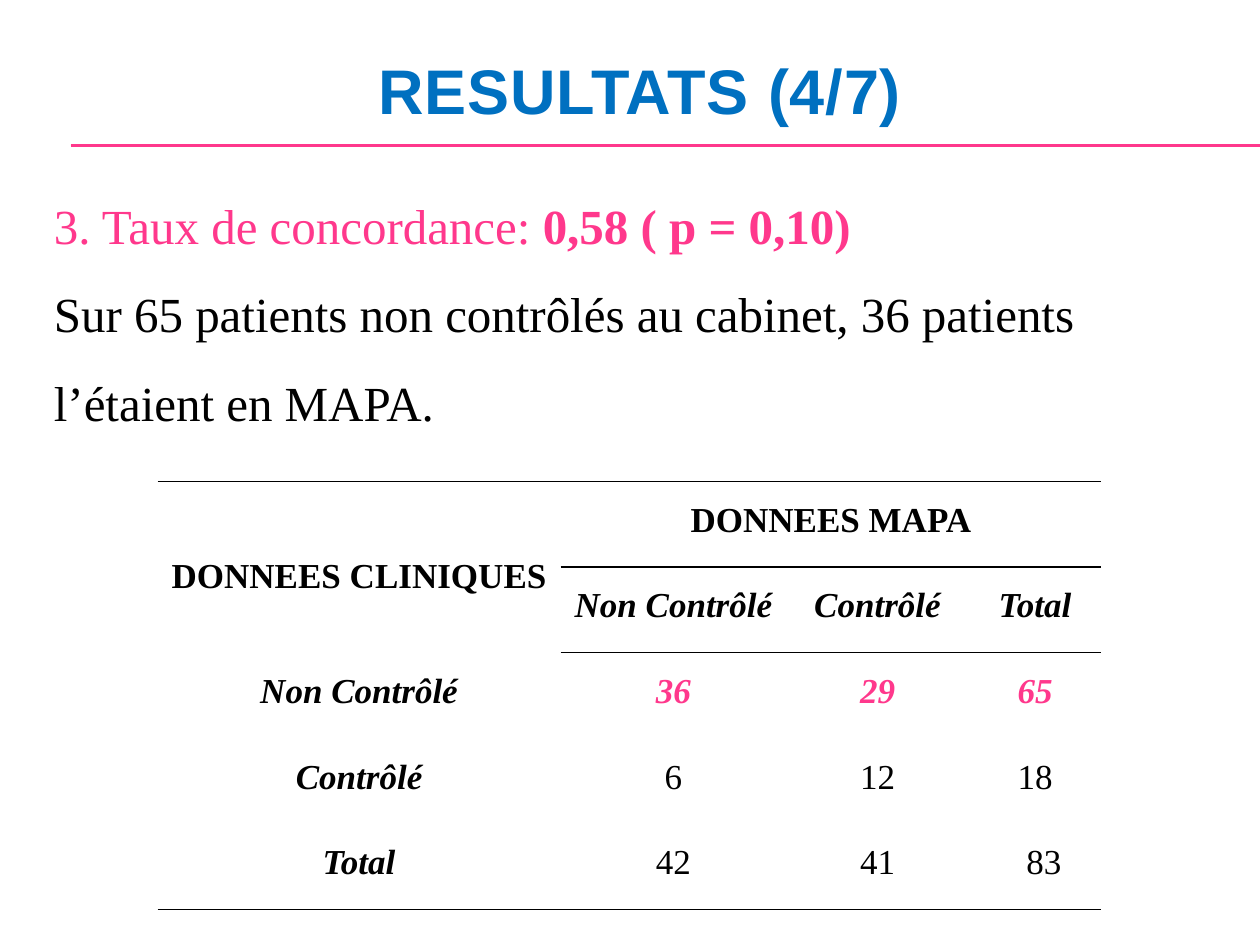
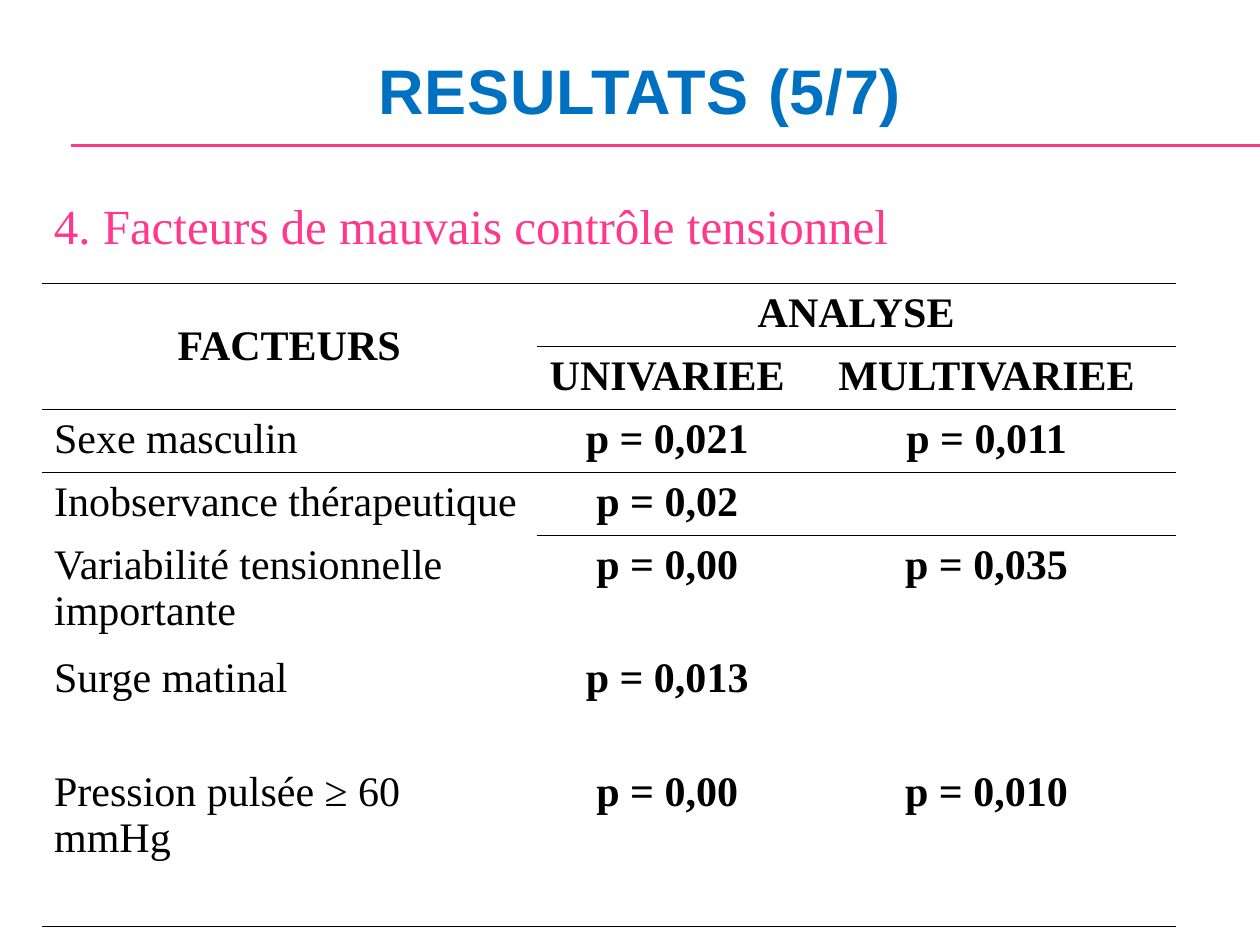
"""Build two result slides, each with a title, a lead text and a ruled table."""
import pptx
import pptx.util
import pptx.dml.color
import pptx.enum.shapes
import pptx.enum.text
import pptx.oxml.ns
import lxml.etree

HUES = {"blue": "0070C0", "pink": "FF388C", "black": "000000"}
HEAD, BODY = "Arial", "Times New Roman"
PLAIN = "{2D5ABB26-0587-4C30-8999-92F81FD0307C}"
WIDE, HIGH = 10, 7.5
LEFT, SPAN = 0.33, 9.5
LINES = (1.15, 1.16)

LOOKS = {
    "n": (False, False, "black"),
    "b": (True, False, "black"),
    "bi": (True, True, "black"),
    "hot": (True, True, "pink"),
}

PAGES = [
    {
        "title": "RESULTATS (4/7)",
        "lead": [
            [("3. Taux de concordance: ", "pink", False),
             ("0,58 ( p = 0,10)", "pink", True)],
            [("Sur 65 patients non contrôlés au cabinet, 36 patients "
              "l’étaient en MAPA.", "black", False)],
        ],
        "deep": 3.55,
        "table": {
            "at": (1.25, 3.82),
            "cols": [3.2, 1.79, 1.45, 1.05],
            "rows": [0.68] * 5,
            "size": 20, "pad": (0.07, 0), "gap": 1.5, "after": 6,
            "mid": True,
            "nudge": {(4, 3): 0.14},
            "rules": [(0, 0, 1), (1, 1, 1), (5, 0, 1)],
            "cells": [
                (["DONNEES CLINIQUES", "DONNEES MAPA", "", ""], "b", "b"),
                (["", "Non Contrôlé", "Contrôlé", "Total"], "bi", "bi"),
                (["Non Contrôlé", "36", "29", "65"], "bi", "hot"),
                (["Contrôlé", "6", "12", "18"], "bi", "n"),
                (["Total", "42", "41", "83"], "bi", "n"),
            ],
        },
    },
    {
        "title": "RESULTATS (5/7)",
        "lead": [[("4. Facteurs de mauvais contrôle tensionnel",
                   "pink", False)]],
        "deep": 1.43,
        "table": {
            "at": (0.33, 2.25),
            "cols": [3.93, 2.07, 3],
            "rows": [0.5] * 4 + [0.9, 0.9, 1.3],
            "size": 24, "pad": (0.1, 0.05), "gap": 1, "after": 0,
            "mid": False,
            "nudge": {},
            "rules": [(0, 0, 1), (1, 1, 1), (2, 0, 1), (3, 1, 0.5), (7, 0, 1)],
            "cells": [
                (["FACTEURS", "ANALYSE", ""], "b", "b"),
                (["", "UNIVARIEE", "MULTIVARIEE"], "b", "b"),
                (["Sexe masculin", "p = 0,021", "p = 0,011"], "n", "b"),
                (["Inobservance thérapeutique", "p = 0,02", ""], "n", "b"),
                (["Variabilité tensionnelle importante", "p = 0,00",
                  "p = 0,035"], "n", "b"),
                (["Surge matinal", "p = 0,013", ""], "n", "b"),
                (["Pression pulsée ≥ 60 mmHg", "p = 0,00", "p = 0,010"],
                 "n", "b"),
            ],
        },
    },
]

inch = pptx.util.Inches
ALIGN = pptx.enum.text.PP_ALIGN
MID = pptx.enum.text.MSO_ANCHOR.MIDDLE


def tint(hue):
    return pptx.dml.color.RGBColor.from_string(HUES[hue])


def sub(node, tag, **attrs):
    return lxml.etree.SubElement(node, pptx.oxml.ns.qn(tag), **attrs)


def put(para, text, face, size, hue, bold=False, slant=False):
    run = para.add_run()
    run.text = text
    font = run.font
    font.name, font.size = face, pptx.util.Pt(size)
    font.bold, font.italic = bold, slant
    font.color.rgb = tint(hue)
    return run


def place(shape, left, top, width, height):
    shape.left, shape.top = inch(left), inch(top)
    shape.width, shape.height = inch(width), inch(height)


def add_lines(slide):
    for top in LINES:
        line = slide.shapes.add_connector(
            pptx.enum.shapes.MSO_CONNECTOR.STRAIGHT,
            inch(0.56), inch(top), inch(WIDE), inch(top))
        line.line.color.rgb = tint("pink")
        line.line.width = pptx.util.Pt(0.75)
        sub(line._element.spPr, "a:effectLst")


def add_title(slide, text):
    title = slide.shapes.title
    place(title, LEFT, 0.25, SPAN, 0.92)
    title.text_frame.vertical_anchor = MID
    para = title.text_frame.paragraphs[0]
    para.alignment = ALIGN.CENTER
    run = put(para, text, HEAD, 36, "blue", True)
    run.font._element.set("spc", "50")


def add_lead(slide, lead, deep):
    box = slide.shapes.add_textbox(0, 0, 0, 0)
    place(box, LEFT, 1.27, SPAN, deep)
    frame = box.text_frame
    frame.word_wrap = True
    for num, parts in enumerate(lead):
        para = frame.add_paragraph() if num else frame.paragraphs[0]
        para.line_spacing = 1.5
        for text, hue, bold in parts:
            put(para, text, BODY, 28, hue, bold)


def edge(cell, side, width):
    line = sub(cell._tc.get_or_add_tcPr(), side,
               w=str(pptx.util.Pt(width)))
    sub(sub(line, "a:solidFill"), "a:srgbClr", val=HUES["black"])


def fill_cell(cell, text, look, data, push, side):
    across, down = data["pad"]
    cell.margin_left = inch(across + push)
    cell.margin_right = inch(across)
    cell.margin_top = cell.margin_bottom = inch(down)
    cell.fill.background()
    if text:
        para = cell.text_frame.paragraphs[0]
        para.alignment = side
        para.line_spacing = data["gap"]
        para.space_after = pptx.util.Pt(data["after"])
        bold, slant, hue = LOOKS[look]
        put(para, text, BODY, data["size"], hue, bold, slant)


def add_grid(slide, data):
    cols, rows = data["cols"], data["rows"]
    left, top = data["at"]
    grid = slide.shapes.add_table(
        len(rows), len(cols), inch(left), inch(top),
        inch(sum(cols)), inch(sum(rows))).table
    grid.first_row = grid.horz_banding = False
    grid._tbl.tblPr.find(pptx.oxml.ns.qn("a:tableStyleId")).text = PLAIN
    for col, width in zip(grid.columns, cols):
        col.width = inch(width)
    for row, height in zip(grid.rows, rows):
        row.height = inch(height)

    for level, first, width in data["rules"]:
        for col in range(first, len(cols)):
            if level < len(rows):
                edge(grid.cell(level, col), "a:lnT", width)
            if level:
                edge(grid.cell(level - 1, col), "a:lnB", width)

    for row, (texts, lead, rest) in enumerate(data["cells"]):
        for col, text in enumerate(texts):
            flush = col == 0 and row > 1 and not data["mid"]
            fill_cell(grid.cell(row, col), text, rest if col else lead, data,
                      data["nudge"].get((row, col), 0),
                      ALIGN.LEFT if flush else ALIGN.CENTER)

    grid.cell(0, 0).merge(grid.cell(1, 0))
    grid.cell(0, 1).merge(grid.cell(0, len(cols) - 1))
    grid.cell(0, 0).vertical_anchor = MID


def main():
    deck = pptx.Presentation()
    deck.slide_width, deck.slide_height = inch(WIDE), inch(HIGH)
    for page in PAGES:
        slide = deck.slides.add_slide(deck.slide_layouts[5])
        add_lines(slide)
        add_title(slide, page["title"])
        add_lead(slide, page["lead"], page["deep"])
        add_grid(slide, page["table"])
    deck.save("out.pptx")


if __name__ == "__main__":
    main()
